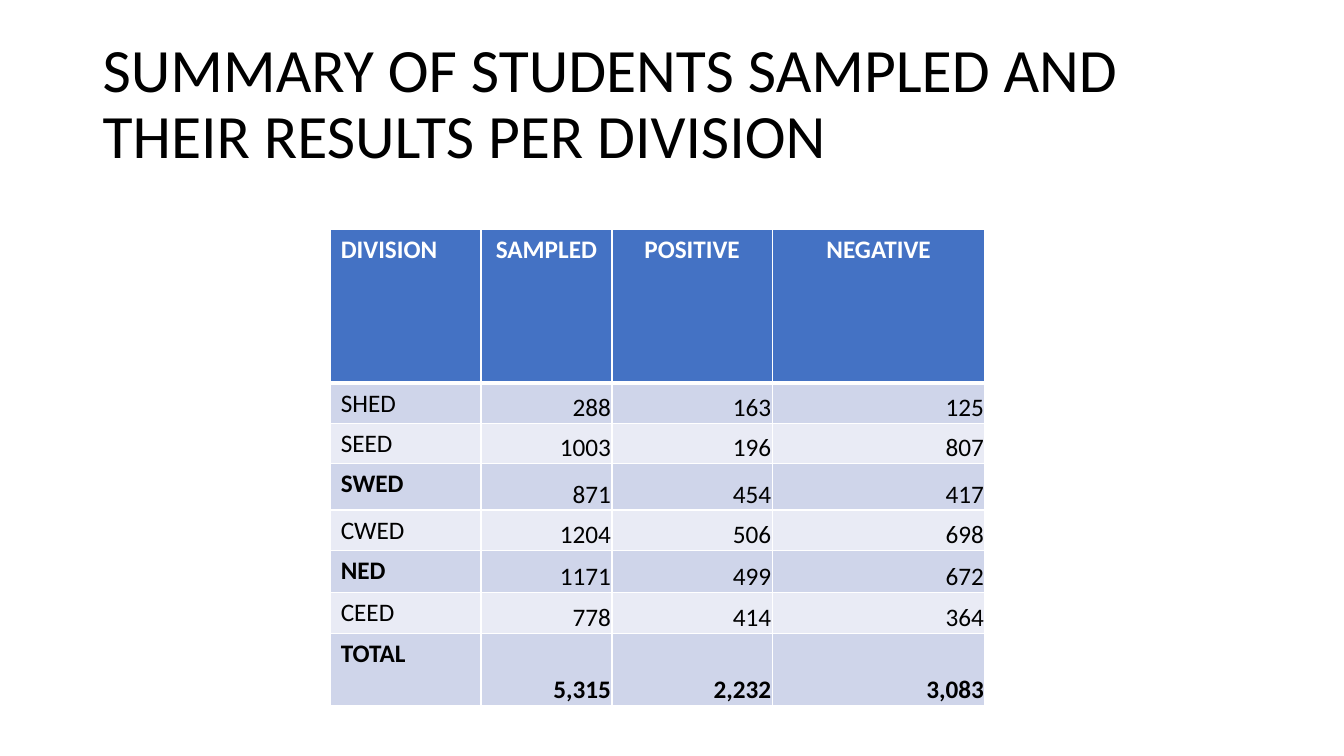
from dataclasses import dataclass

from lxml.etree import SubElement
from pptx import Presentation
from pptx.dml.color import RGBColor
from pptx.enum.text import MSO_ANCHOR, PP_ALIGN
from pptx.oxml.ns import qn
from pptx.util import Inches, Pt


@dataclass(frozen=True)
class Theme:
    font: str = "Calibri"
    title_size: int = 44
    table_size: int = 18
    ink: str = "000000"
    white: str = "FFFFFF"
    header: str = "4472C4"
    bands: tuple = ("E9EBF5", "CFD5EA")
    rule: int = 1
    header_rule: int = 3


THEME = Theme()
COLUMN_WIDTHS = (1.49, 1.3, 1.59, 2.11)
ROW_HEIGHTS = (1.52, 0.4, 0.4, 0.46, 0.38, 0.42, 0.28, 0.72)
RESULTS = (
    ("DIVISION", "SAMPLED", "POSITIVE", "NEGATIVE"),
    ("SHED", "288", "163", "125"),
    ("SEED", "1003", "196", "807"),
    ("SWED", "871", "454", "417"),
    ("CWED", "1204", "506", "698"),
    ("NED", "1171", "499", "672"),
    ("CEED", "778", "414", "364"),
    ("TOTAL", "5,315", "2,232", "3,083"),
)
BOLD_DIVISIONS = ("SWED", "NED", "TOTAL")


def style_paragraph(paragraph, size, color, bold=False):
    font = paragraph.font
    font.name = THEME.font
    font.size = Pt(size)
    font.bold = bold
    font.color.rgb = RGBColor.from_string(color)


def add_title(slide, wording):
    title = slide.shapes.add_textbox(Inches(0.92), Inches(0.32), Inches(11.5), Inches(1.45))
    frame = title.text_frame
    frame.word_wrap = True
    frame.vertical_anchor = MSO_ANCHOR.MIDDLE
    heading = frame.paragraphs[0]
    heading.text = wording
    heading.line_spacing = 0.9
    style_paragraph(heading, THEME.title_size, THEME.ink)


def set_borders(cell, row):
    properties = cell._tc.get_or_add_tcPr()
    widths = {
        "a:lnL": THEME.rule,
        "a:lnR": THEME.rule,
        "a:lnT": THEME.header_rule if row == 1 else THEME.rule,
        "a:lnB": THEME.header_rule if row == 0 else THEME.rule,
    }
    for side, width in widths.items():
        line = SubElement(properties, qn(side), w=str(Pt(width)))
        fill = SubElement(line, qn("a:solidFill"))
        SubElement(fill, qn("a:srgbClr"), val=THEME.white)


def fill_cell(cell, value, row, column):
    is_header = row == 0
    is_number = not is_header and column > 0
    set_borders(cell, row)
    cell.fill.solid()
    background = THEME.header if is_header else THEME.bands[row % 2]
    cell.fill.fore_color.rgb = RGBColor.from_string(background)
    cell.text = value
    paragraph = cell.text_frame.paragraphs[0]
    is_total = row == len(RESULTS) - 1
    bold = is_header or is_total or value in BOLD_DIVISIONS
    style_paragraph(paragraph, THEME.table_size, THEME.white if is_header else THEME.ink, bold)
    if is_number:
        paragraph.alignment = PP_ALIGN.RIGHT
        cell.vertical_anchor = MSO_ANCHOR.BOTTOM
        cell.margin_left = cell.margin_right = cell.margin_top = Inches(0.01)
        cell.margin_bottom = Inches(0)
    elif column > 0:
        paragraph.alignment = PP_ALIGN.CENTER


def add_results_table(slide):
    height = Inches(4.72)
    holder = slide.shapes.add_table(
        len(RESULTS), len(COLUMN_WIDTHS), Inches(3.28), Inches(2.28), Inches(6.49), height
    )
    table = holder.table
    for column, width in zip(table.columns, COLUMN_WIDTHS):
        column.width = Inches(width)
    for row, row_height in zip(table.rows, ROW_HEIGHTS):
        row.height = Inches(row_height)
    holder.height = height
    for row, values in enumerate(RESULTS):
        for column, value in enumerate(values):
            fill_cell(table.cell(row, column), value, row, column)


def main():
    deck = Presentation()
    deck.slide_width = Inches(13.33)
    deck.slide_height = Inches(7.5)
    slide = deck.slides.add_slide(deck.slide_layouts[6])
    add_title(slide, "SUMMARY OF STUDENTS SAMPLED AND THEIR RESULTS PER DIVISION")
    add_results_table(slide)
    deck.save("out.pptx")


if __name__ == "__main__":
    main()
